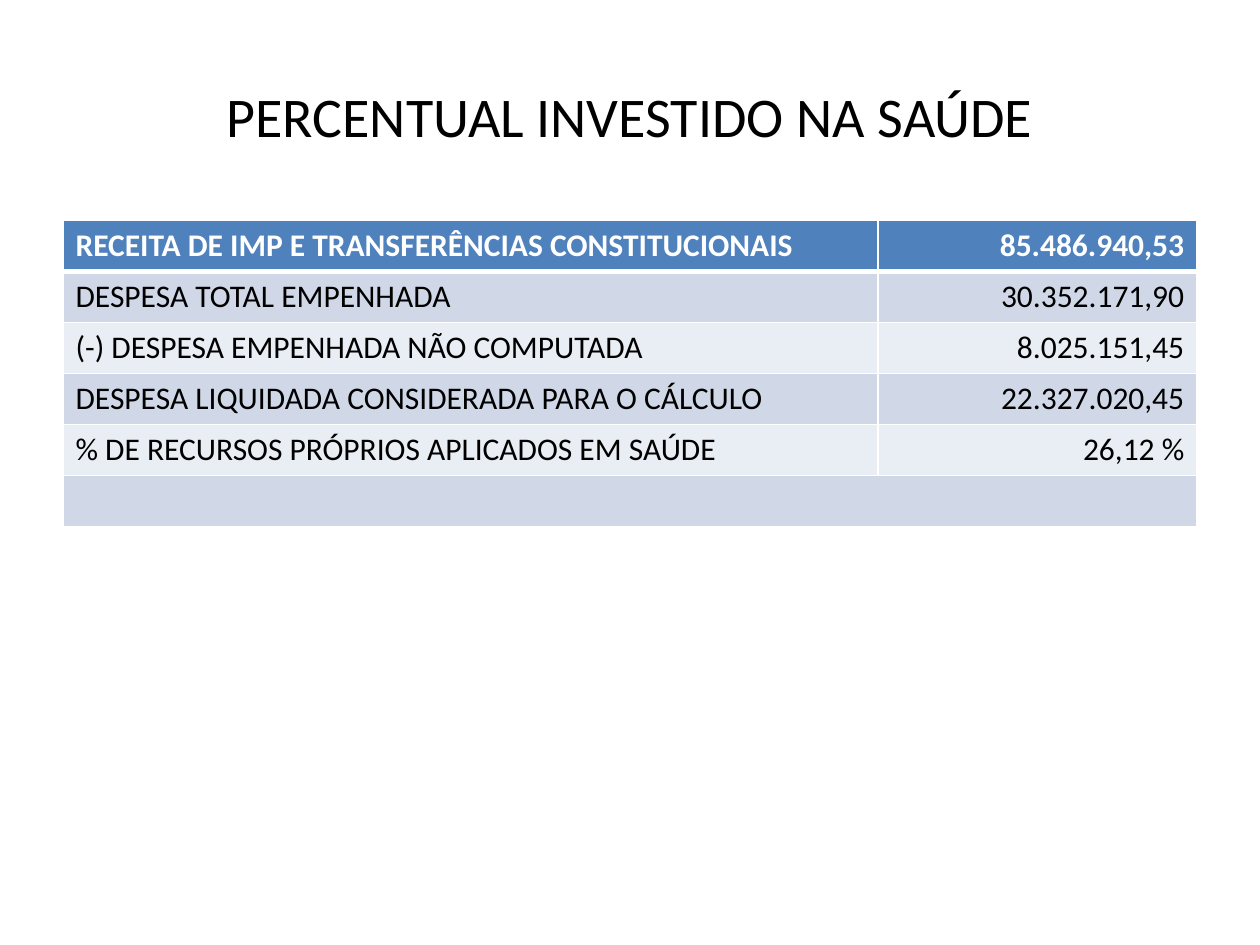
from dataclasses import dataclass

from lxml.etree import SubElement
from pptx import Presentation
from pptx.dml.color import RGBColor
from pptx.enum.text import MSO_ANCHOR, PP_ALIGN
from pptx.oxml.ns import qn
from pptx.slide import Slide
from pptx.table import _Cell
from pptx.text.text import TextFrame
from pptx.util import Inches, Pt


@dataclass(frozen=True)
class Theme:
    font: str = "Calibri"
    title_size: int = 32
    table_size: int = 18
    ink: str = "000000"
    white: str = "FFFFFF"
    header: str = "4F81BD"
    bands: tuple[str, str] = ("D0D8E8", "E9EDF4")
    rule: float = 1
    header_rule: float = 3


@dataclass(frozen=True)
class BudgetLine:
    label: str
    amount: str


THEME = Theme()
SLIDE_WIDTH, SLIDE_HEIGHT = Inches(10), Inches(7.5)
MARGIN = int(SLIDE_WIDTH * 0.05)
CONTENT_WIDTH = SLIDE_WIDTH - 2 * MARGIN
LABEL_WIDTH = Inches(6.47)
ROW_HEIGHT = Inches(0.405)

BUDGET = [
    BudgetLine("RECEITA DE IMP E TRANSFERÊNCIAS CONSTITUCIONAIS", "85.486.940,53"),
    BudgetLine("DESPESA TOTAL EMPENHADA", "30.352.171,90"),
    BudgetLine("(-) DESPESA EMPENHADA NÃO COMPUTADA", "8.025.151,45"),
    BudgetLine("DESPESA LIQUIDADA CONSIDERADA PARA O CÁLCULO", "22.327.020,45"),
    BudgetLine("% DE RECURSOS PRÓPRIOS APLICADOS EM SAÚDE", "26,12 %"),
]


def write(frame: TextFrame, text: str, size: int, color: str,
          align: PP_ALIGN, bold: bool = False) -> None:
    para = frame.paragraphs[0]
    para.alignment = align
    span = para.add_run()
    span.text = text
    span.font.name = THEME.font
    span.font.size = Pt(size)
    span.font.bold = bold
    span.font.color.rgb = RGBColor.from_string(color)


def style_cell(cell: _Cell, fill: str, top: float, bottom: float) -> None:
    """Fill a cell and rule its four sides in white, widths in points."""
    properties = cell._tc.get_or_add_tcPr()
    widths = {"lnL": THEME.rule, "lnR": THEME.rule, "lnT": top, "lnB": bottom}
    for side, width in widths.items():
        line = SubElement(properties, qn(f"a:{side}"), w=str(Pt(width)))
        solid = SubElement(line, qn("a:solidFill"))
        SubElement(solid, qn("a:srgbClr"), val=THEME.white)
    cell.fill.solid()
    cell.fill.fore_color.rgb = RGBColor.from_string(fill)


def add_title(slide: Slide, text: str) -> None:
    box = slide.shapes.add_textbox(MARGIN, Inches(0.29), CONTENT_WIDTH, Inches(1.25))
    frame = box.text_frame
    frame.word_wrap = True
    frame.vertical_anchor = MSO_ANCHOR.MIDDLE
    write(frame, text, THEME.title_size, THEME.ink, PP_ALIGN.CENTER)


def add_budget_table(slide: Slide, lines: list[BudgetLine]) -> None:
    """Draw a header, the banded lines and an empty merged closing row."""
    row_count = len(lines) + 1
    table = slide.shapes.add_table(row_count, 2, MARGIN, Inches(1.75),
                                   CONTENT_WIDTH, ROW_HEIGHT * row_count).table
    table.columns[0].width = LABEL_WIDTH
    table.columns[1].width = CONTENT_WIDTH - LABEL_WIDTH

    for row in range(row_count):
        fill = THEME.bands[(row - 1) % 2] if row else THEME.header
        top = THEME.header_rule if row == 1 else THEME.rule
        bottom = THEME.header_rule if row == 0 else THEME.rule
        for column in range(2):
            style_cell(table.cell(row, column), fill, top, bottom)

    for row, line in enumerate(lines):
        is_header = row == 0
        color = THEME.white if is_header else THEME.ink
        for column, (text, align) in enumerate(
                [(line.label, PP_ALIGN.LEFT), (line.amount, PP_ALIGN.RIGHT)]):
            write(table.cell(row, column).text_frame, text, THEME.table_size,
                  color, align, is_header)

    table.cell(row_count - 1, 0).merge(table.cell(row_count - 1, 1))


def main() -> None:
    deck = Presentation()
    deck.slide_width, deck.slide_height = SLIDE_WIDTH, SLIDE_HEIGHT
    page = deck.slides.add_slide(deck.slide_layouts[6])
    add_title(page, "PERCENTUAL INVESTIDO NA SAÚDE")
    add_budget_table(page, BUDGET)
    deck.save("out.pptx")


if __name__ == "__main__":
    main()
